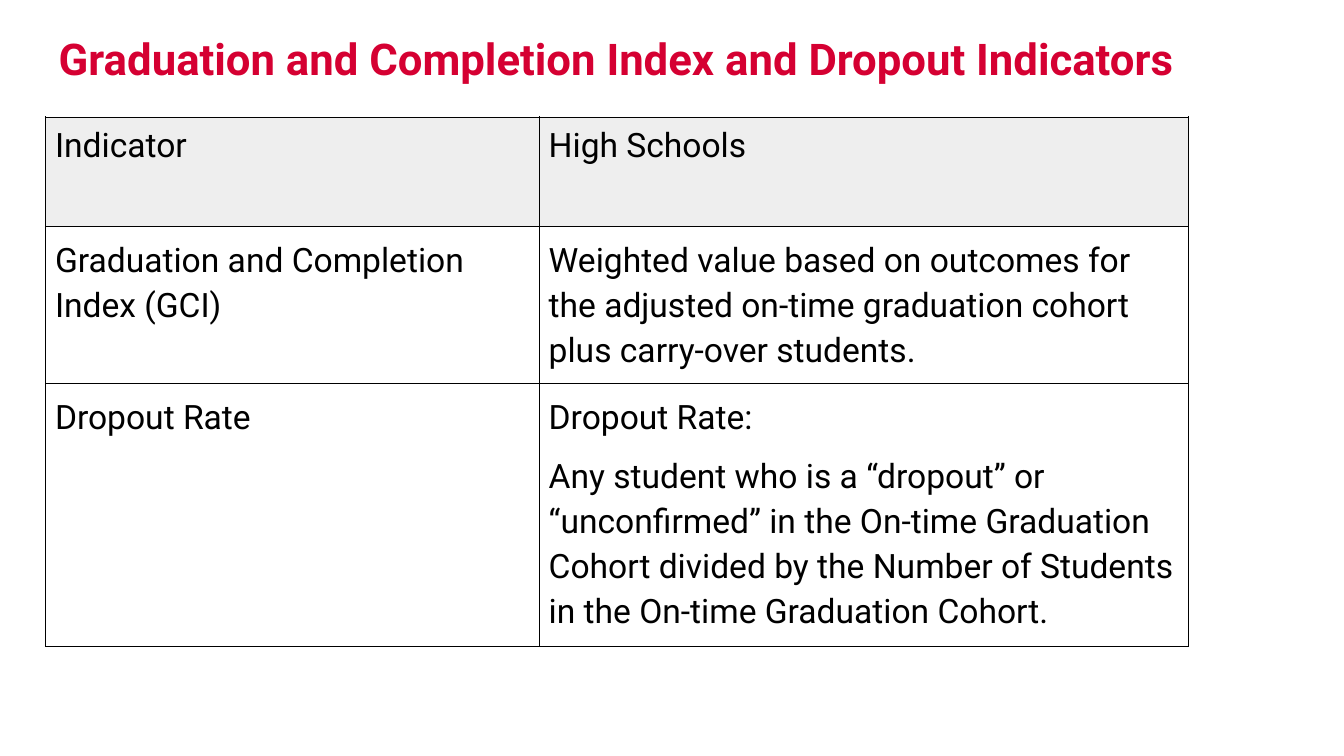
from lxml import etree
from pptx import Presentation
from pptx.dml.color import RGBColor
from pptx.enum.text import MSO_ANCHOR, PP_ALIGN
from pptx.oxml.ns import qn
from pptx.util import Cm, Pt

TOP = MSO_ANCHOR.TOP
LEFT = PP_ALIGN.LEFT
FONT = "Roboto"
BORDER_WIDTH = Pt(0.5)


def style_run(span, size, color, bold=False):
    span.font.name = FONT
    span.font.size = Pt(size)
    span.font.bold = bold
    span.font.color.rgb = RGBColor.from_string(color)


def add_borders(cell, color):
    properties = cell._tc.get_or_add_tcPr()
    for position, side in enumerate(("a:lnL", "a:lnR", "a:lnT", "a:lnB")):
        line = etree.Element(qn(side), w=str(BORDER_WIDTH))
        fill = etree.SubElement(line, qn("a:solidFill"))
        etree.SubElement(fill, qn("a:srgbClr"), val=color)
        properties.insert(position, line)


deck = Presentation()
deck.slide_width = Cm(25.4)
deck.slide_height = Cm(14.29)
page = deck.slides.add_slide(deck.slide_layouts[6])

title_box = page.shapes.add_textbox(Cm(0.86), Cm(0.36), Cm(22.6), Cm(2.16))
title_frame = title_box.text_frame
title_frame.word_wrap = True
title_frame.vertical_anchor = TOP
title_frame.margin_left = title_frame.margin_right = Cm(0.25)
title_frame.margin_top = title_frame.margin_bottom = Cm(0.25)
title_frame.text = "Graduation and Completion Index and Dropout Indicators"
title_frame.paragraphs[0].alignment = LEFT
style_run(title_frame.paragraphs[0].runs[0], 23.4, "D50032", bold=True)

rows = [
    ("Indicator", "High Schools"),
    (
        "Graduation and Completion Index (GCI)",
        "Weighted value based on outcomes for the adjusted on-time "
        "graduation cohort plus carry-over students.",
    ),
    (
        "Dropout Rate",
        "Dropout Rate:\nAny student who is a “dropout” or “unconfirmed” in the "
        "On-time Graduation Cohort divided by the Number of Students in the "
        "On-time Graduation Cohort.",
    ),
]
column_widths = [9.33, 12.27]
row_heights = [2.07, 2.92, 4.9]

table = page.shapes.add_table(
    len(rows), len(column_widths), Cm(0.86), Cm(2.21),
    Cm(sum(column_widths)), Cm(sum(row_heights)),
).table
for column, width in zip(table.columns, column_widths):
    column.width = Cm(width)
for row, height in zip(table.rows, row_heights):
    row.height = Cm(height)

for row_index, texts in enumerate(rows):
    for column_index, text in enumerate(texts):
        cell = table.cell(row_index, column_index)
        cell.margin_left = cell.margin_right = Cm(0.18)
        cell.margin_top = cell.margin_bottom = Cm(0.18)
        cell.vertical_anchor = TOP
        cell.fill.solid()
        cell.fill.fore_color.rgb = RGBColor.from_string(
            "EEEEEE" if row_index == 0 else "FFFFFF"
        )
        add_borders(cell, "000000")
        cell.text_frame.text = text
        for para_index, para in enumerate(cell.text_frame.paragraphs):
            if row_index > 0:
                para.line_spacing = 1.14
            if para_index > 0:
                para.space_before = Pt(7.5)
            style_run(para.runs[0], 18, "000000")

deck.save("out.pptx")
